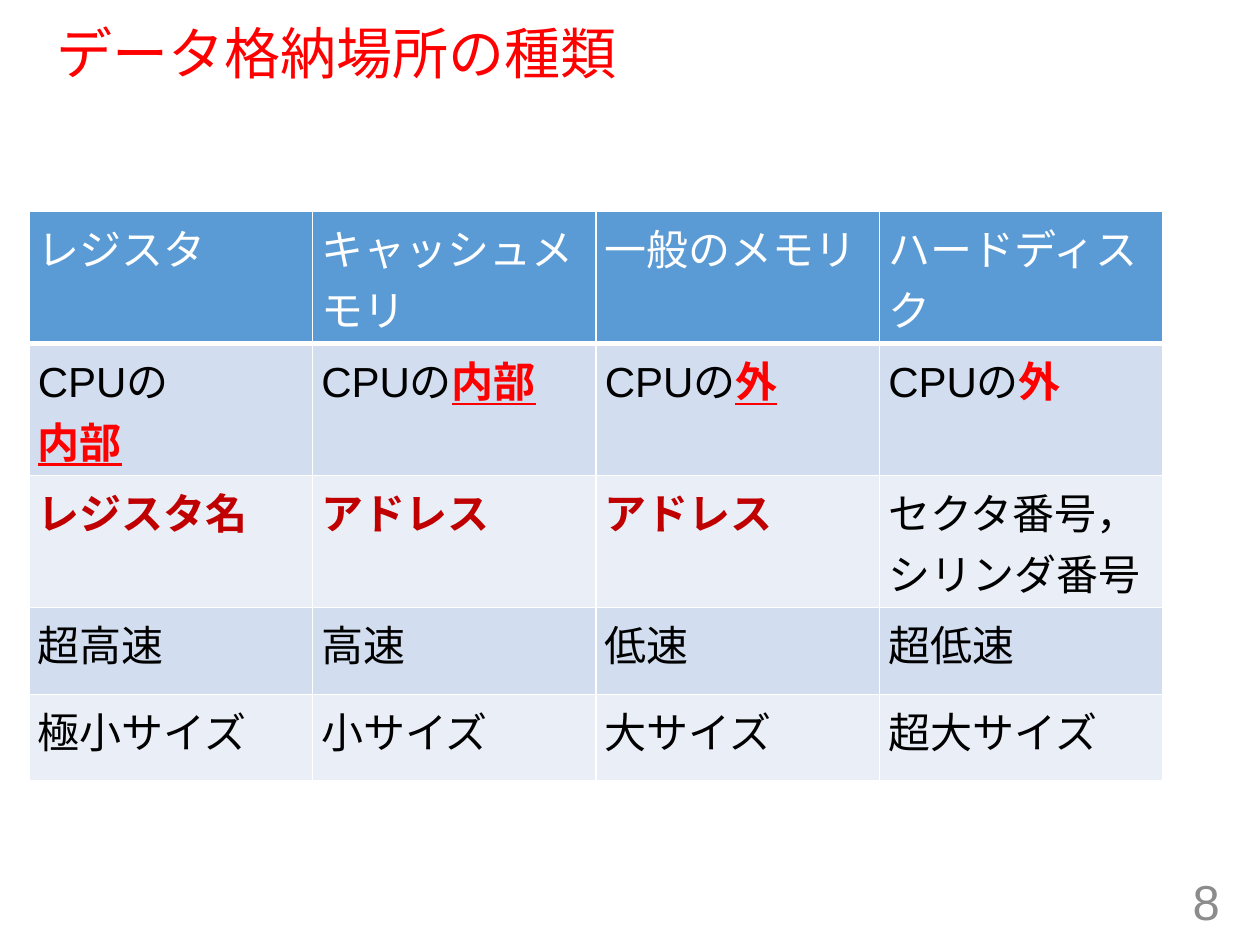
from dataclasses import dataclass

import lxml.etree
import pptx
import pptx.dml.color
import pptx.enum.lang
import pptx.enum.text
import pptx.oxml.ns
import pptx.util

RGBColor = pptx.dml.color.RGBColor
WHITE = RGBColor(0xFF, 0xFF, 0xFF)
BLACK = RGBColor(0, 0, 0)
RED = RGBColor(0xFF, 0, 0)
DARK_RED = RGBColor(0xC0, 0, 0)
GREY = RGBColor(0x8C, 0x8C, 0x8C)
HEADER_BLUE = RGBColor(0x5B, 0x9B, 0xD5)
BAND_DARK = RGBColor(0xD2, 0xDE, 0xEF)
BAND_LIGHT = RGBColor(0xEA, 0xEF, 0xF7)

FONT = "Arial"
PX_PER_INCH = 100
JAPANESE = pptx.enum.lang.MSO_LANGUAGE_ID.JAPANESE
MIDDLE = pptx.enum.text.MSO_ANCHOR.MIDDLE
ALIGN = pptx.enum.text.PP_ALIGN


@dataclass(frozen=True)
class Span:
    text: str
    color: RGBColor = BLACK
    bold: bool = False
    underline: bool = False


Lines = list[list[Span]]  # paragraphs of one box or cell


def px(length: int) -> int:
    return pptx.util.Inches(length / PX_PER_INCH)


def plain(*texts: str, color: RGBColor = BLACK, bold: bool = False) -> Lines:
    return [[Span(text, color, bold)] for text in texts]


def write(frame, lines: Lines, size: int, align=ALIGN.LEFT) -> None:
    for index, spans in enumerate(lines):
        para = frame.paragraphs[0] if index == 0 else frame.add_paragraph()
        para.alignment = align
        para.font.name = FONT
        para.font.size = pptx.util.Pt(size)
        for span in spans:
            run = para.add_run()
            run.text = span.text
            run.font.color.rgb = span.color
            run.font.bold = span.bold
            run.font.underline = span.underline
            run.font.language_id = JAPANESE


def place(box, left: int, top: int, width: int, height: int) -> None:
    box.left, box.top = px(left), px(top)
    box.width, box.height = px(width), px(height)


def add_border(cell, side: str, points: int) -> None:
    properties = cell._tc.get_or_add_tcPr()
    line = lxml.etree.SubElement(
        properties, pptx.oxml.ns.qn(f"a:ln{side}"), w=str(pptx.util.Pt(points)))
    fill = lxml.etree.SubElement(line, pptx.oxml.ns.qn("a:solidFill"))
    lxml.etree.SubElement(fill, pptx.oxml.ns.qn("a:srgbClr"), val=str(WHITE))


CPU = Span("CPUの")
INSIDE = Span("内部", RED, True, True)
OUTSIDE = Span("外", RED, True, True)
ADDRESS = plain("アドレス", color=DARK_RED, bold=True)

ROWS: list[list[Lines]] = [
    [plain(name, color=WHITE)
     for name in ("レジスタ", "キャッシュメモリ", "一般のメモリ", "ハードディスク")],
    [[[CPU], [INSIDE]], [[CPU, INSIDE]], [[CPU, OUTSIDE]],
     [[CPU, Span("外", RED, True)]]],
    [plain("レジスタ名", color=DARK_RED, bold=True), ADDRESS, ADDRESS,
     plain("セクタ番号，", "シリンダ番号")],
    [plain(speed) for speed in ("超高速", "高速", "低速", "超低速")],
    [plain(size) for size in ("極小サイズ", "小サイズ", "大サイズ", "超大サイズ")],
]
ROW_HEIGHTS = [88, 78, 78, 69, 69]
COLUMN_WIDTH = 225
HEADER_BORDERS = {"L": 1, "R": 1, "T": 1, "B": 3}


def add_storage_table(page) -> None:
    columns = len(ROWS[0])
    table = page.shapes.add_table(
        len(ROWS), columns, px(23), px(168),
        px(columns * COLUMN_WIDTH), px(sum(ROW_HEIGHTS))).table
    for column in table.columns:
        column.width = px(COLUMN_WIDTH)
    for row_index, row in enumerate(ROWS):
        table.rows[row_index].height = px(ROW_HEIGHTS[row_index])
        for column_index, lines in enumerate(row):
            cell = table.cell(row_index, column_index)
            cell.margin_left = cell.margin_right = px(7)
            cell.margin_top = cell.margin_bottom = px(4)
            if row_index == 0:
                for side, points in HEADER_BORDERS.items():
                    add_border(cell, side, points)
            cell.fill.solid()
            cell.fill.fore_color.rgb = (
                HEADER_BLUE if row_index == 0
                else BAND_DARK if row_index % 2 else BAND_LIGHT)
            write(cell.text_frame, lines, 24)


def main() -> None:
    deck = pptx.Presentation()
    deck.slide_width, deck.slide_height = px(1000), px(750)
    page = deck.slides.add_slide(deck.slide_layouts[5])

    # Title
    title = page.shapes.title
    place(title, 35, 19, 925, 51)
    title.text_frame.auto_size = pptx.enum.text.MSO_AUTO_SIZE.NONE
    title.text_frame.vertical_anchor = MIDDLE
    write(title.text_frame, plain("データ格納場所の種類", color=RED), 32)
    title.text_frame.paragraphs[0].line_spacing = 0.9

    # Comparison of storage places
    add_storage_table(page)

    # Page number
    number = page.shapes.add_textbox(px(753), px(695), px(225), px(40))
    number.text_frame.word_wrap = True
    number.text_frame.vertical_anchor = MIDDLE
    write(number.text_frame, plain("8", color=GREY), 28, ALIGN.RIGHT)

    deck.save("out.pptx")


if __name__ == "__main__":
    main()
